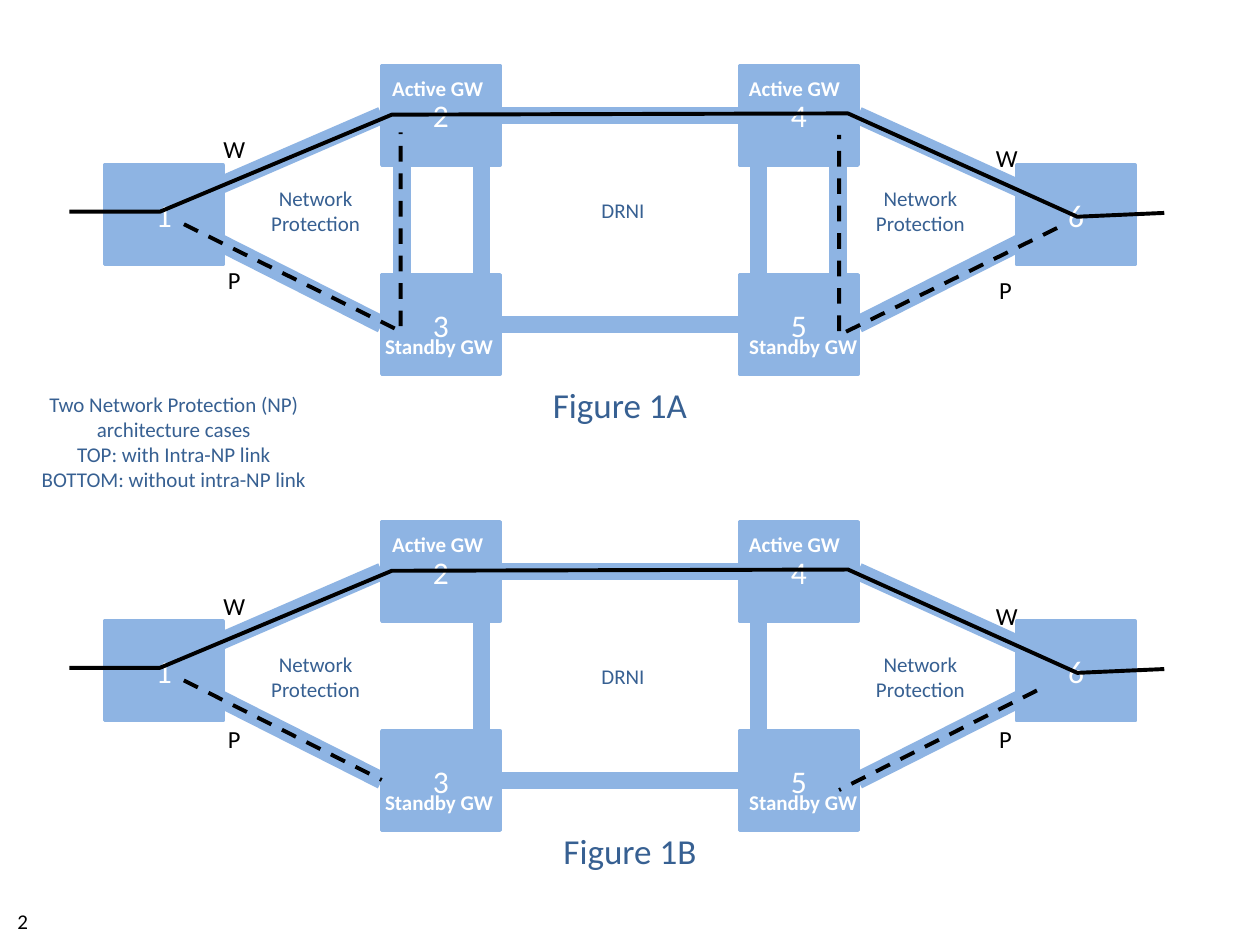
from lxml import etree
from pptx import Presentation
from pptx.dml.color import RGBColor
from pptx.enum.dml import MSO_LINE
from pptx.enum.shapes import MSO_CONNECTOR, MSO_SHAPE
from pptx.enum.text import MSO_ANCHOR, PP_ALIGN
from pptx.oxml.ns import qn
from pptx.util import Inches, Pt

LINE = MSO_CONNECTOR.STRAIGHT
RECT = MSO_SHAPE.RECTANGLE
DASH = MSO_LINE.DASH
MIDDLE = MSO_ANCHOR.MIDDLE
CENTER = PP_ALIGN.CENTER
LEFT, RIGHT = 1, 3
COLORS = {
    name: RGBColor.from_string(code)
    for name, code in {"node": "8EB4E3", "note": "376092",
                       "ink": "000000", "white": "FFFFFF"}.items()
}

prs = Presentation()
prs.slide_width, prs.slide_height = Inches(10), Inches(7.5)
COL = prs.slide_width // 100
ROW = prs.slide_height // 75
slide = prs.slides.add_slide(prs.slide_layouts[5])
shapes = slide.shapes


def write(shape, words, size, color, bold=False, wrap=False):
    frame = shape.text_frame
    frame.text = words
    frame.word_wrap = wrap
    frame.vertical_anchor = MIDDLE
    frame.margin_left = frame.margin_right = 0
    frame.margin_top = frame.margin_bottom = 0
    for par in frame.paragraphs:
        par.alignment = CENTER
        par.font.name = "Calibri"
        par.font.size = Pt(size)
        par.font.bold = bold
        par.font.color.rgb = COLORS[color]


def link(x1, y1, x2, y2):
    """Add a thick link between two grid points."""
    line = shapes.add_connector(LINE, round(x1 * COL), round(y1 * ROW),
                                round(x2 * COL), round(y2 * ROW))
    line.line.color.rgb = COLORS["node"]
    line.line.width = Pt(10)
    etree.SubElement(line._element.spPr, qn("a:effectLst"))
    return line


# Nodes: left column, row below the top of the figure
BOX_W, BOX_H = 9.4, 7.9
GATES = {"2": (30.3, 0), "3": (30.3, 16.6), "4": (58.7, 0), "5": (58.7, 16.6)}
ENDS = {"1": (8.3, 7.9), "6": (80.7, 7.9)}
SPOKES = [("2", 12.2, LEFT), ("3", 13, LEFT), ("4", 85.4, RIGHT), ("5", 85.4, RIGHT)]
TRACE = [(92.4, 11.7), (85.5, 12), (67.3, 3.8), (31.1, 3.9), (12.7, 11.6), (5.5, 11.6)]

# Rows in each figure are counted from its top
FIGURES = [
    {"top": 5.2, "title": ("Figure 1A", 42.9, 25.2),
     "rungs": [31.9, 38.2, 60.2, 66.5], "zone": 9.5,
     "marks": [("W", 17.7, 5.4), ("P", 18.1, 15.8), ("W", 79, 6.1), ("P", 79.3, 16.6)],
     "spare": [[(14.6, 12.6), (31.8, 21.1), (31.8, 5.3)],
               [(83.9, 12.9), (66.6, 21.4), (66.6, 5.5)]]},
    {"top": 41.4, "title": ("Figure 1B", 43.7, 24.4),
     "rungs": [38.2, 60.2], "zone": 10.3,
     "marks": [("W", 17.7, 5.5), ("P", 18.1, 16), ("W", 79, 6.3), ("P", 79.3, 16)],
     "spare": [[(14.6, 12.6), (30.3, 20.5)],
               [(82.3, 13.4), (66.6, 21.3)]]},
]

for fig in FIGURES:
    top = fig["top"]
    nodes = {}

    # Gateways come first, then the spokes, then the end nodes on top of them
    for group in (GATES, ENDS):
        for name, (x, y) in group.items():
            node = shapes.add_shape(RECT, round(x * COL), round((top + y) * ROW),
                                    round(BOX_W * COL), round(BOX_H * ROW))
            node.shadow.inherit = False
            node.fill.solid()
            node.fill.fore_color.rgb = COLORS["node"]
            node.line.color.rgb = COLORS["node"]
            node.line.width = Pt(2)
            write(node, name, 18, "white")
            nodes[name] = node
        if group is GATES:
            for name, x, side in SPOKES:
                edge = GATES[name][0] + (BOX_W if side == RIGHT else 0)
                mid = top + GATES[name][1] + BOX_H / 2
                link(x, top + 11.8, edge, mid).end_connect(nodes[name], side)

    for one, two in (("2", "4"), ("3", "5")):
        mid = top + GATES[one][1] + BOX_H / 2
        span = link(GATES[one][0] + BOX_W, mid, GATES[two][0], mid)
        span.begin_connect(nodes[one], RIGHT)
        span.end_connect(nodes[two], LEFT)
    for x in fig["rungs"]:
        link(x, top + BOX_H, x, top + GATES["3"][1])

    # Working route is solid, protection routes are dashed
    for route in [TRACE] + fig["spare"]:
        spots = [(round(x * COL), round((top + y) * ROW)) for x, y in route]
        pen = shapes.build_freeform(*spots[0])
        pen.add_line_segments(spots[1:], close=False)
        path = pen.convert_to_shape()
        path.shadow.inherit = False
        path.fill.background()
        path.line.color.rgb = COLORS["ink"]
        path.line.width = Pt(2.25)
        if route is not TRACE:
            path.line.dash_style = DASH

    # Words, left, row, width, height, size, colour, bold, wrap
    zone = fig["zone"]
    title, left, row = fig["title"]
    labels = [
        ("Active GW", 31.1, 0.8, 7.3, 2, 12, "white", True, False),
        ("Active GW", 59.4, 0.8, 7.3, 2, 12, "white", True, False),
        ("Standby GW", 30.5, 21.3, 8.7, 2, 12, "white", True, False),
        ("Standby GW", 59.4, 21.3, 8.7, 2, 12, "white", True, False),
        ("Network Protection", 20.9, zone, 8.3, 4, 12, "note", False, True),
        ("Network Protection", 68.9, zone, 8.3, 4, 12, "note", False, True),
        ("DRNI", 45.3, zone + 1, 8.3, 2, 12, "note", False, False),
        (title, left, row, 12.6, 3.4, 20, "note", False, False),
    ]
    for mark, x, y in fig["marks"]:
        wide = 1.8 if mark == "W" else 1
        labels.append((mark, x, y, wide, 2.4, 14, "ink", False, False))
    for words, x, y, wide, high, *style in labels:
        box = shapes.add_textbox(round(x * COL), round((top + y) * ROW),
                                 round(wide * COL), round(high * ROW))
        write(box, words, *style)

note = shapes.title
note.left, note.top = round(1.2 * COL), 31 * ROW
note.width, note.height = round(25.2 * COL), round(8.1 * ROW)
write(note, "Two Network Protection (NP) architecture cases\n"
      "TOP: with Intra-NP link\nBOTTOM: without intra-NP link", 12, "note", wrap=True)

page = shapes.add_textbox(round(0.8 * COL), round(72.1 * ROW), 2 * COL, 2 * ROW)
write(page, "2", 12, "ink")

prs.save("out.pptx")
